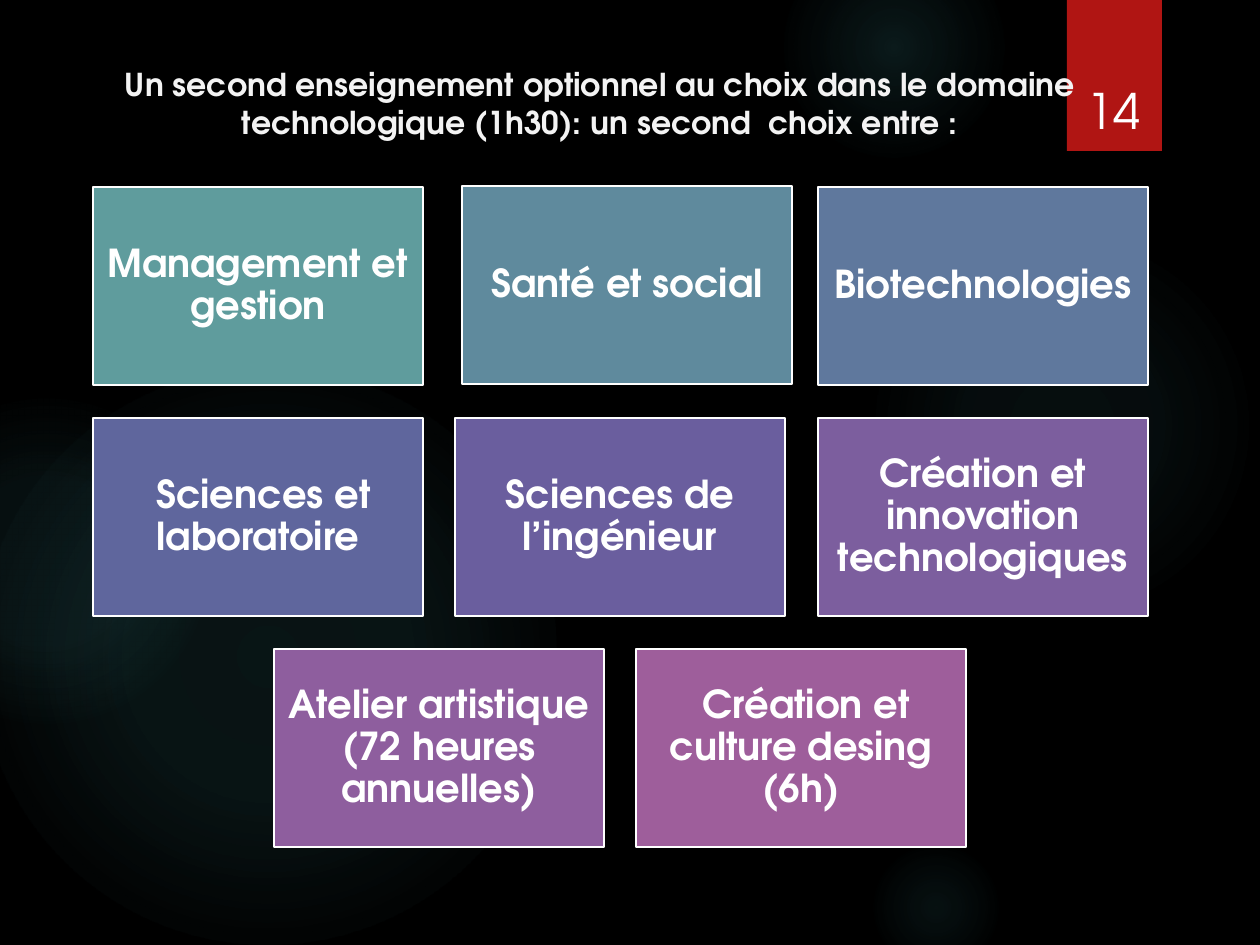
import pptx
import pptx.util
import pptx.dml.color
import pptx.enum.shapes
import pptx.enum.text
import pptx.oxml
import pptx.oxml.ns

PX = 914400 / 126
FONT = "TeX Gyre Adventor"
COLORS = {"background": "000000", "glow": "50B9C1", "ribbon": "B01513",
          "title": "F3F3F3", "white": "FFFFFF"}
MIDDLE = pptx.enum.text.MSO_ANCHOR.MIDDLE
SHAPES = pptx.enum.shapes.MSO_SHAPE


def add_shape(kind, *box):
    shape = slide.shapes.add_shape(kind, *[round(value * PX) for value in box])
    shape.shadow.inherit = False
    shape.line.fill.background()
    return shape


def set_text(shape, text, size, color, bold, anchor):
    frame = shape.text_frame
    frame.text = text
    frame.word_wrap = True
    frame.auto_size = pptx.enum.text.MSO_AUTO_SIZE.NONE
    frame.vertical_anchor = anchor
    paragraph = frame.paragraphs[0]
    paragraph.alignment = pptx.enum.text.PP_ALIGN.CENTER
    paragraph.font.name = FONT
    paragraph.font.size = pptx.util.Pt(size)
    paragraph.font.bold = bold
    paragraph.font.color.rgb = pptx.dml.color.RGBColor.from_string(COLORS.get(color, color))
    return paragraph


presentation = pptx.Presentation()
presentation.slide_width = round(1260 * PX)
presentation.slide_height = round(945 * PX)
slide = presentation.slides.add_slide(presentation.slide_layouts[5])
background = slide.background.fill
background.solid()
background.fore_color.rgb = pptx.dml.color.RGBColor.from_string(COLORS["background"])

# Soft glows: left, top, diameter, then inner and middle opacity and outer stop in percent
glows = [
    (868, 231, 388, 7, 6, 69),
    (784, -63, 220, 14, 7, 73),
    (868, 840, 136, 9, 5, 66),
    (-21, 368, 577, 11, 10, 75),
    (-116, 399, 325, 8, 8, 72),
]
for left, top, diameter, inner, middle, edge in glows:
    glow = add_shape(SHAPES.OVAL, left, top, diameter, diameter)
    stops = "".join(
        f'<a:gs pos="{position * 1000}"><a:srgbClr val="{COLORS["glow"]}">'
        f'<a:alpha val="{opacity * 1000}"/></a:srgbClr></a:gs>'
        for position, opacity in ((0, inner), (36, middle), (edge, 0)))
    gradient = pptx.oxml.parse_xml(
        f'<a:gradFill {pptx.oxml.ns.nsdecls("a")}><a:gsLst>{stops}</a:gsLst>'
        '<a:path path="circle"><a:fillToRect l="50000" t="50000" r="50000" b="50000"/>'
        '</a:path></a:gradFill>')
    glow._element.spPr.find(pptx.oxml.ns.qn("a:prstGeom")).addnext(gradient)

# Ribbon behind the slide number
ribbon = add_shape(SHAPES.RECTANGLE, 1067, 0, 95, 151)
ribbon.fill.solid()
ribbon.fill.fore_color.rgb = pptx.dml.color.RGBColor.from_string(COLORS["ribbon"])

# Title, brought in front of the ribbon
title = slide.shapes.title
title.left, title.top, title.width, title.height = [
    round(value * PX) for value in (94, 59, 1012, 110)]
set_text(title, "Un second enseignement optionnel au choix dans le domaine "
         "technologique (1h30): un second  choix entre :",
         18, "title", True, pptx.enum.text.MSO_ANCHOR.TOP)
slide.shapes._spTree.append(title._element)

# Option cards: left, top, fill, label
cards = [
    (93, 187, "5F9C9D", "Management et gestion"),
    (462, 186, "5F8A9D", "Santé et social"),
    (818, 187, "5F789D", "Biotechnologies"),
    (93, 418, "5F669D", " Sciences et laboratoire"),
    (455, 418, "6A5E9E", "Sciences de l’ingénieur"),
    (818, 418, "7C5E9E", "Création et innovation technologiques"),
    (274, 649, "8E5E9E", "Atelier artistique (72 heures annuelles)"),
    (636, 649, "9E5E9B", " Création et culture desing (6h)"),
]
for left, top, color, label in cards:
    card = add_shape(SHAPES.RECTANGLE, left, top, 330, 198)
    card.fill.solid()
    card.fill.fore_color.rgb = pptx.dml.color.RGBColor.from_string(color)
    card.line.color.rgb = pptx.dml.color.RGBColor.from_string(COLORS["white"])
    card.line.width = pptx.util.Pt(1.5)
    paragraph = set_text(card, label, 22, "white", True, MIDDLE)
    paragraph.line_spacing = 0.9
    frame = card.text_frame
    frame.margin_left = frame.margin_right = round(11 * PX)
    frame.margin_top = frame.margin_bottom = round(11 * PX)

# Slide number
number = slide.shapes.add_textbox(*[round(value * PX) for value in (1070, 40, 87, 106)])
set_text(number, "14", 28, "white", False, pptx.enum.text.MSO_ANCHOR.BOTTOM)

presentation.save("out.pptx")
